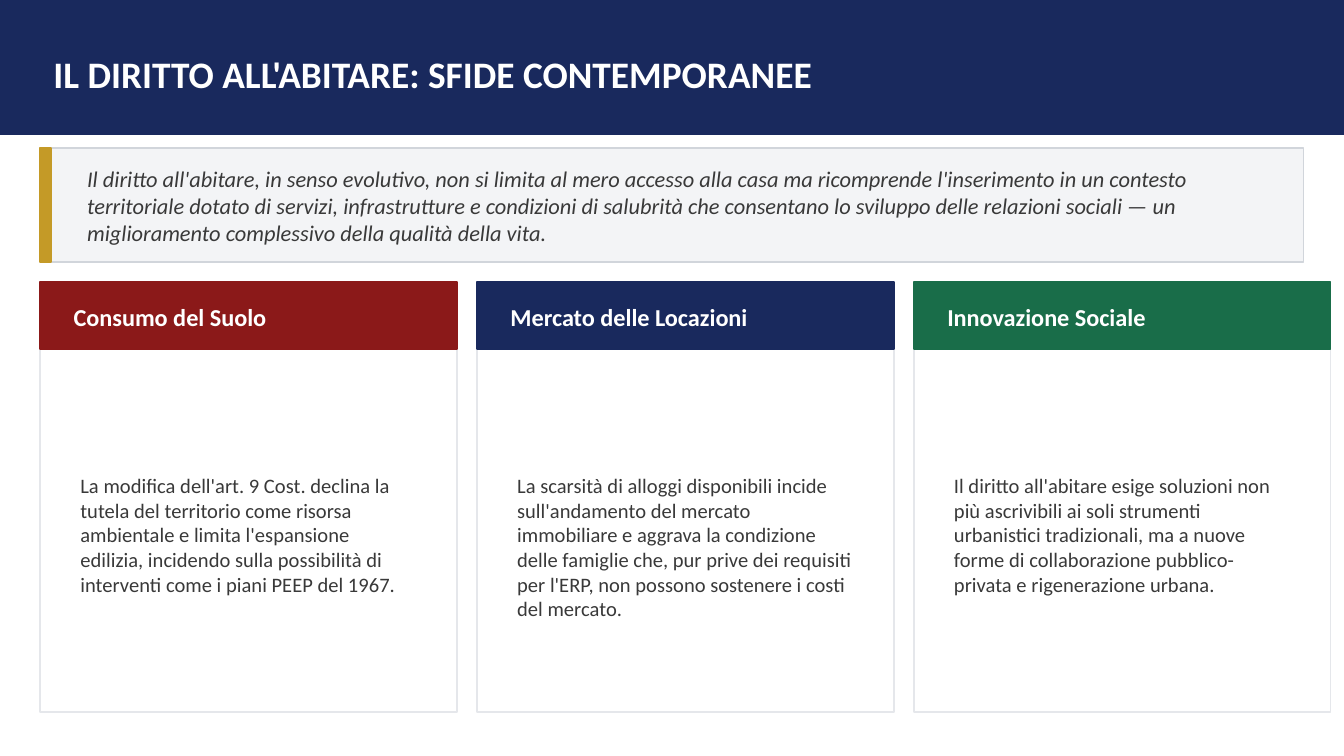
from dataclasses import dataclass

from pptx import Presentation
from pptx.dml.color import RGBColor
from pptx.enum.shapes import MSO_SHAPE as Shape
from pptx.enum.text import MSO_AUTO_SIZE as AutoSize
from pptx.util import Inches, Pt


@dataclass(frozen=True)
class Theme:
    font: str = "Calibri"
    white: str = "FFFFFF"
    ink: str = "393939"
    navy: str = "19295D"
    red: str = "8B1919"
    green: str = "196D49"
    gold: str = "C49A27"
    quote_fill: str = "F3F4F6"
    quote_line: str = "D1D5DB"
    card_line: str = "E5E7EB"
    title_size: int = 20
    heading_size: int = 13
    quote_size: int = 12
    body_size: int = 11


class SlideBuilder:
    def __init__(self, slide, theme):
        self.s = slide
        self.theme = theme

    def box(self, x, y, w, h, fill, line=None):
        """Rectangle whose outline takes the fill colour unless given."""
        sp = self.s.shapes.add_shape(
            Shape.RECTANGLE, Inches(x), Inches(y), Inches(w), Inches(h))
        sp.shadow.inherit = False
        sp.fill.solid()
        sp.fill.fore_color.rgb = RGBColor.from_string(fill)
        sp.line.color.rgb = RGBColor.from_string(line or fill)
        sp.line.width = Pt(1)

    def text(self, x, y, w, h, text, size, color, bold=False, italic=False):
        sp = self.s.shapes.add_textbox(
            Inches(x), Inches(y), Inches(w), Inches(h))
        tf = sp.text_frame
        tf.word_wrap = True
        tf.auto_size = AutoSize.SHAPE_TO_FIT_TEXT
        tf.text = text
        font = tf.paragraphs[0].runs[0].font
        font.name = self.theme.font
        font.size = Pt(size)
        font.bold = bold
        font.italic = italic
        font.color.rgb = RGBColor.from_string(color)

    def title_band(self, text):
        t = self.theme
        self.box(0, 0, 10, 1, t.navy)
        self.text(0.3, 0.33, 9.4, 0.38, text, t.title_size, t.white, bold=True)

    def quote(self, text):
        t = self.theme
        self.box(0.3, 1.1, 9.4, 0.85, t.quote_fill, t.quote_line)
        self.box(0.3, 1.1, 0.08, 0.85, t.gold)
        self.text(0.55, 1.18, 8.9, 0.69, text, t.quote_size, t.ink, italic=True)

    def card(self, x, y, w, h, color, heading, body):
        t = self.theme
        self.box(x, y, w, h, t.white, t.card_line)
        self.box(x, y, w, 0.5, color)
        self.text(x + 0.15, y + 0.1, w - 0.3, 0.28, heading,
                  t.heading_size, t.white, bold=True)
        self.text(x + 0.2, y + 1.37, w - 0.4, 0.97, body, t.body_size, t.ink)


def main():
    prs = Presentation()
    prs.slide_width = Inches(10)
    prs.slide_height = Inches(10 * 9 / 16)
    theme = Theme()
    builder = SlideBuilder(prs.slides.add_slide(prs.slide_layouts[6]), theme)

    builder.title_band("IL DIRITTO ALL'ABITARE: SFIDE CONTEMPORANEE")
    builder.quote(
        "Il diritto all'abitare, in senso evolutivo, non si limita al mero "
        "accesso alla casa ma ricomprende l'inserimento in un contesto "
        "territoriale dotato di servizi, infrastrutture e condizioni di "
        "salubrità che consentano lo sviluppo delle relazioni sociali — un "
        "miglioramento complessivo della qualità della vita.")

    cards = [
        (theme.red, "Consumo del Suolo",
         "La modifica dell'art. 9 Cost. declina la tutela del territorio come "
         "risorsa ambientale e limita l'espansione edilizia, incidendo sulla "
         "possibilità di interventi come i piani PEEP del 1967."),
        (theme.navy, "Mercato delle Locazioni",
         "La scarsità di alloggi disponibili incide sull'andamento del mercato "
         "immobiliare e aggrava la condizione delle famiglie che, pur prive "
         "dei requisiti per l'ERP, non possono sostenere i costi del mercato."),
        (theme.green, "Innovazione Sociale",
         "Il diritto all'abitare esige soluzioni non più ascrivibili ai soli "
         "strumenti urbanistici tradizionali, ma a nuove forme di "
         "collaborazione pubblico-privata e rigenerazione urbana."),
    ]
    width, gap = 3.1, 0.15
    for i, (color, heading, body) in enumerate(cards):
        builder.card(0.3 + i * (width + gap), 2.1, width, 3.2,
                     color, heading, body)

    prs.save("out.pptx")


if __name__ == "__main__":
    main()
